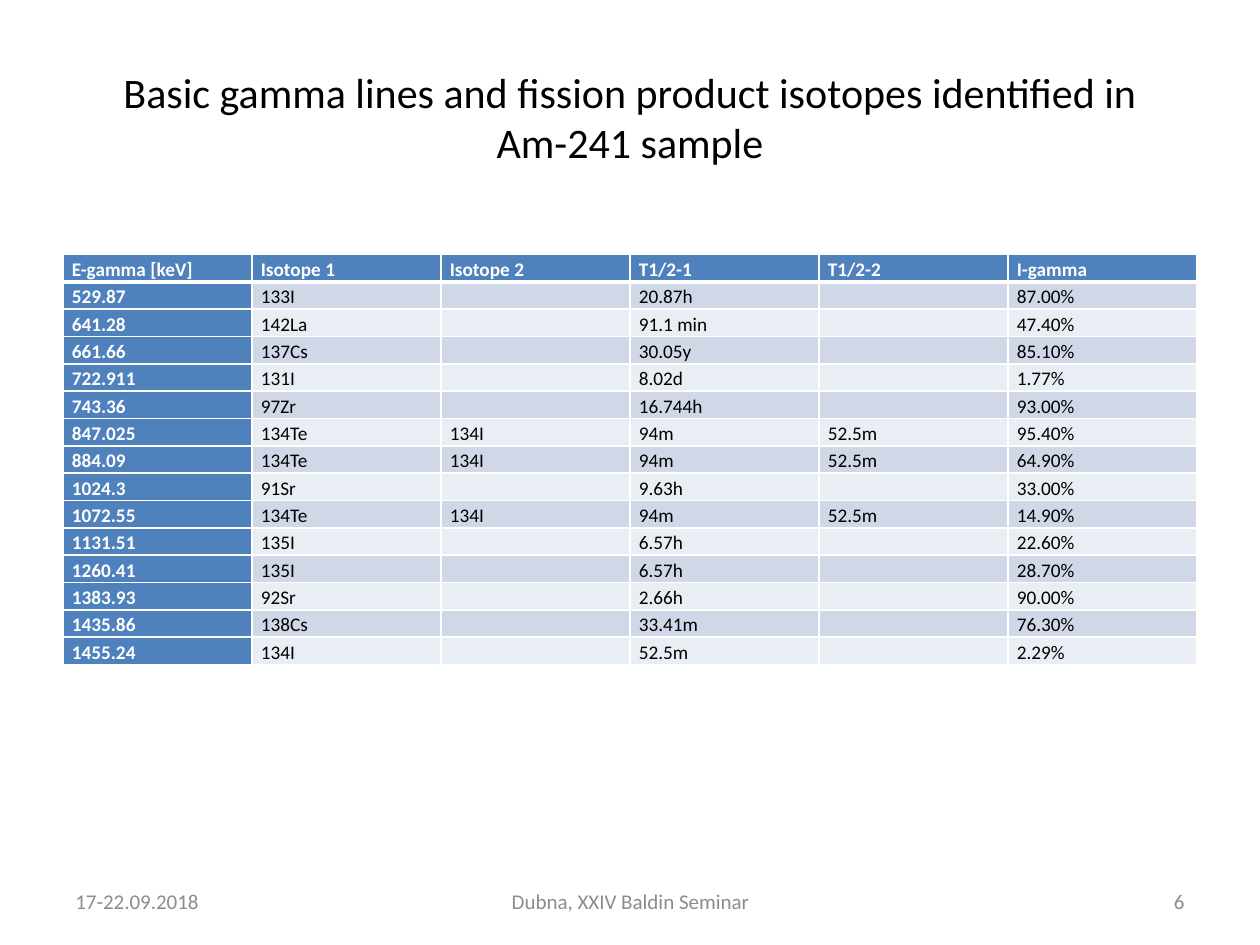
from lxml.etree import SubElement
from pptx import Presentation
from pptx.dml.color import RGBColor
from pptx.enum.text import MSO_ANCHOR, PP_ALIGN
from pptx.oxml.ns import qn
from pptx.util import Inches, Pt

TITLE = "Basic gamma lines and fission product isotopes identified in Am-241 sample"
HEAD = ("E-gamma [keV]", "Isotope 1", "Isotope 2", "T1/2-1", "T1/2-2", "I-gamma")
LINES = [
    ("529.87", "133I", "", "20.87h", "", "87.00%"),
    ("641.28", "142La", "", "91.1 min", "", "47.40%"),
    ("661.66", "137Cs", "", "30.05y", "", "85.10%"),
    ("722.911", "131I", "", "8.02d", "", "1.77%"),
    ("743.36", "97Zr", "", "16.744h", "", "93.00%"),
    ("847.025", "134Te", "134I", "94m", "52.5m", "95.40%"),
    ("884.09", "134Te", "134I", "94m", "52.5m", "64.90%"),
    ("1024.3", "91Sr", "", "9.63h", "", "33.00%"),
    ("1072.55", "134Te", "134I", "94m", "52.5m", "14.90%"),
    ("1131.51", "135I", "", "6.57h", "", "22.60%"),
    ("1260.41", "135I", "", "6.57h", "", "28.70%"),
    ("1383.93", "92Sr", "", "2.66h", "", "90.00%"),
    ("1435.86", "138Cs", "", "33.41m", "", "76.30%"),
    ("1455.24", "134I", "", "52.5m", "", "2.29%"),
]
FOOT = [
    ("17-22.09.2018", 0.5, 2.33, PP_ALIGN.LEFT),
    ("Dubna, XXIV Baldin Seminar", 3.42, 3.17, PP_ALIGN.CENTER),
    ("6", 7.17, 2.33, PP_ALIGN.RIGHT),
]
WIDE, HIGH, EDGE = 10, 7.5, 0.5
SPAN = WIDE - 2 * EDGE
BLUE, WHITE, BLACK, GRAY = "4F81BD", "FFFFFF", "000000", "8C8C8C"
BANDS = ("D0D8E8", "E9EDF4")
HEAD_H, ROW_H = 0.13, 0.21
PAD = dict(margin_left=Inches(0.07), margin_right=Inches(0.07),
           margin_top=0, margin_bottom=0)


def put(item, vals):
    for key, val in vals.items():
        setattr(item, key, val)


def tint(form, shade):
    form.rgb = RGBColor.from_string(shade)


def write(para, text, size, shade, bold=False, **form):
    put(para, form)
    if not text:
        para._p.get_or_add_endParaRPr().set("sz", str(size * 100))
        return
    run = para.add_run()
    run.text = text
    put(run.font, dict(name="Calibri", size=Pt(size), bold=bold))
    tint(run.font.color, shade)


def rule(cell, top, base):
    props = cell._tc.get_or_add_tcPr()
    sides = dict(lnL=1, lnR=1, lnT=top, lnB=base)
    for spot, (side, width) in enumerate(sides.items()):
        line = SubElement(props, qn(f"a:{side}"), w=str(Pt(width)))
        fill = SubElement(line, qn("a:solidFill"))
        SubElement(fill, qn("a:srgbClr"), val=WHITE)
        props.insert(spot, line)


def add_title(slide):
    box = slide.shapes.title
    put(box, dict(left=Inches(EDGE), top=Inches(0.3),
                  width=Inches(SPAN), height=Inches(1.25)))
    put(box.text_frame, dict(word_wrap=True, vertical_anchor=MSO_ANCHOR.MIDDLE))
    write(box.text_frame.paragraphs[0], TITLE, 24, BLACK, alignment=PP_ALIGN.CENTER)


def add_grid(slide):
    rows = [HEAD, *LINES]
    tall = HEAD_H + ROW_H * len(LINES)
    grid = slide.shapes.add_table(len(rows), len(HEAD), Inches(EDGE), Inches(2.02),
                                  Inches(SPAN), Inches(tall)).table
    grid.first_col = True
    for r, row in enumerate(rows):
        grid.rows[r].height = Inches(ROW_H if r else HEAD_H)
        for c, text in enumerate(row):
            cell = grid.cell(r, c)
            main = r == 0 or c == 0
            put(cell, PAD)
            cell.fill.solid()
            tint(cell.fill.fore_color, BLUE if main else BANDS[(r - 1) % 2])
            rule(cell, 3 if r == 1 else 1, 1 if r else 3)
            write(cell.text_frame.paragraphs[0], text, 11,
                  WHITE if main else BLACK, main, line_spacing=1.15)


def add_foot(slide):
    for text, left, width, side in FOOT:
        box = slide.shapes.add_textbox(Inches(left), Inches(6.95),
                                       Inches(width), Inches(0.4))
        put(box.text_frame, dict(word_wrap=True, vertical_anchor=MSO_ANCHOR.MIDDLE))
        write(box.text_frame.paragraphs[0], text, 12, GRAY, alignment=side)


def main():
    """Build the slide of gamma lines and save it."""
    deck = Presentation()
    put(deck, dict(slide_width=Inches(WIDE), slide_height=Inches(HIGH)))
    slide = deck.slides.add_slide(deck.slide_layouts[5])
    for add in (add_title, add_grid, add_foot):
        add(slide)
    deck.save("out.pptx")


if __name__ == "__main__":
    main()
